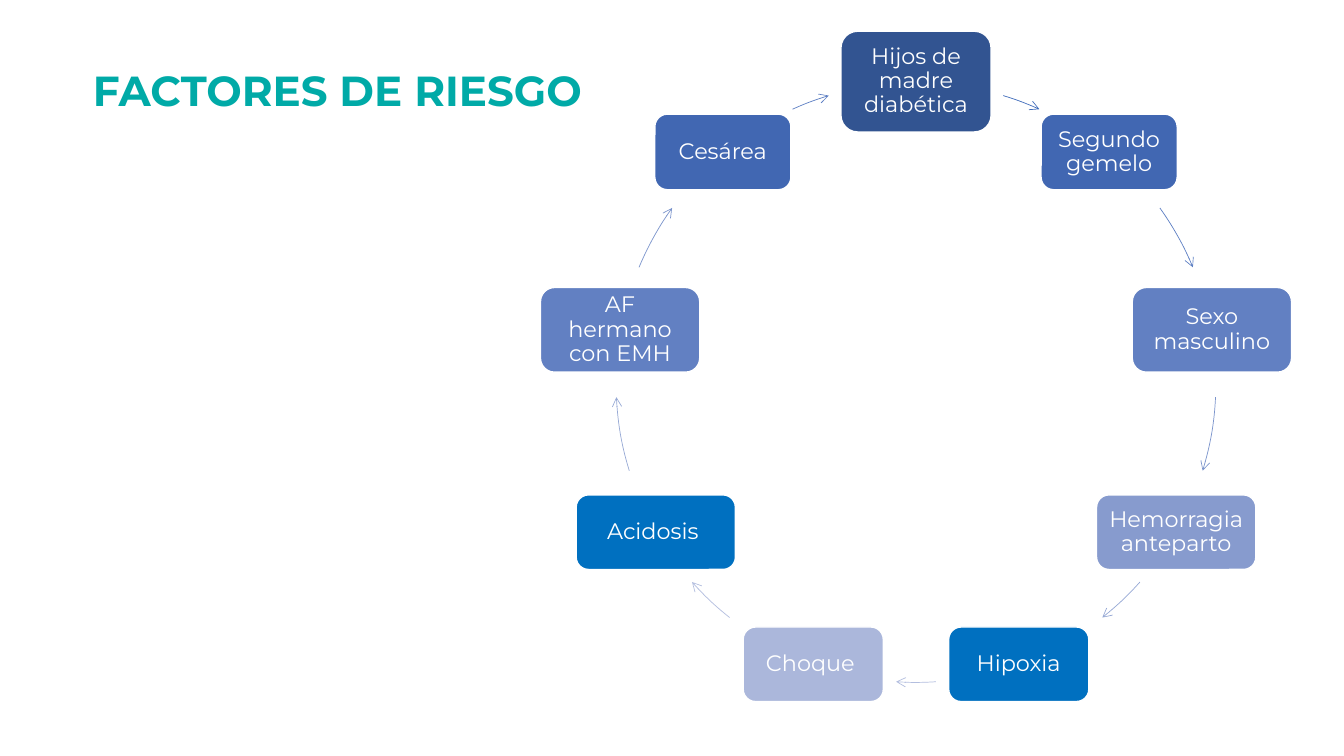
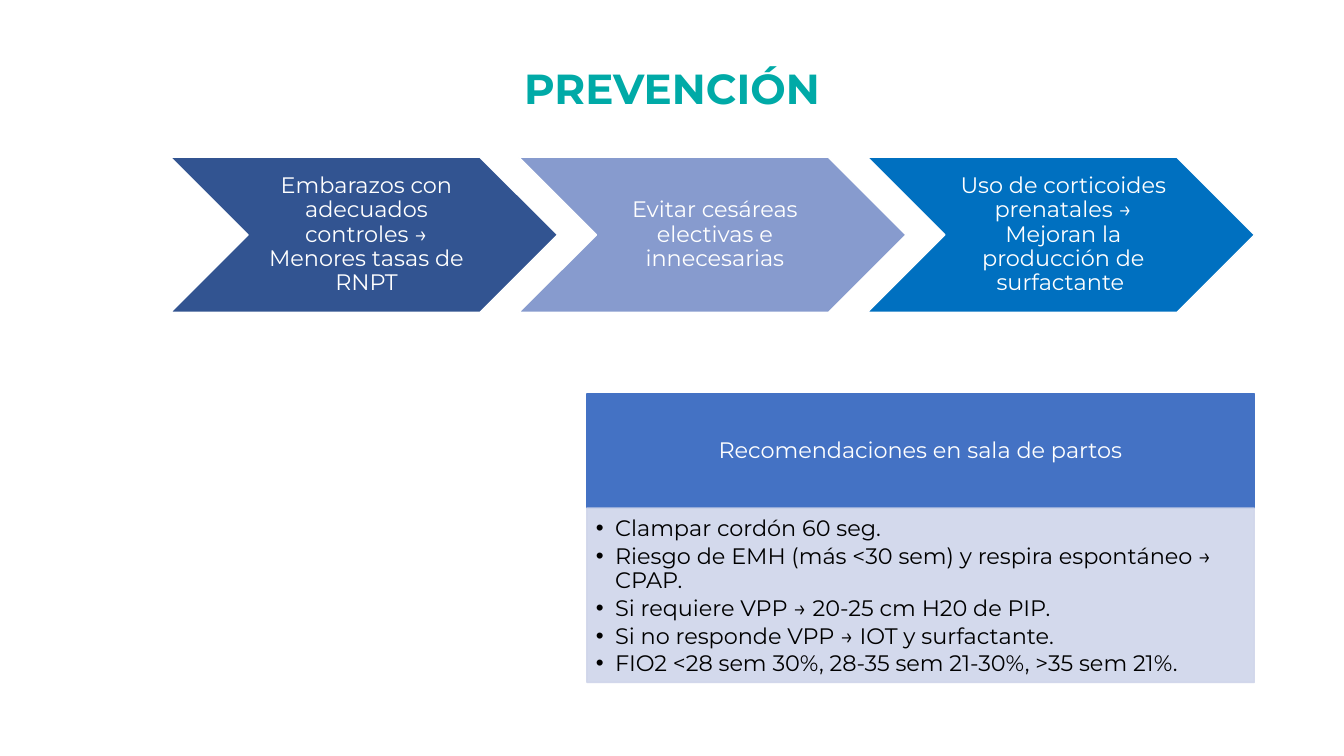
from dataclasses import dataclass
from math import cos, radians, sin

from lxml.etree import SubElement
from pptx import Presentation
from pptx.dml.color import RGBColor
from pptx.enum.shapes import MSO_SHAPE as Preset
from pptx.enum.text import MSO_ANCHOR as Anchor, PP_ALIGN as Align
from pptx.oxml.ns import qn
from pptx.util import Inches, Pt


@dataclass(frozen=True)
class Theme:
    font: str = "Montserrat"
    title_size: int = 30
    body_size: int = 16
    line_spacing: float = 0.9
    title: str = "00AAA7"
    white: str = "FFFFFF"
    black: str = "000000"
    navy: str = "325491"
    royal: str = "4167B2"
    medium: str = "6280C2"
    soft: str = "879BCE"
    pale: str = "ABB7DB"
    bright: str = "0070C0"
    header: str = "4472C4"
    panel: str = "CFD5EA"
    arrows: tuple = ("416DBB", "5E80C4", "7B94CC", "97A9D5", "B3BEDF")


THEME = Theme()

RING_LEFT, RING_TOP, RING_SIZE = 6.11, 0.82, 5.95
CYCLE_CENTER = (RING_LEFT + RING_SIZE / 2, 3.79)
NODE_RADIUS = 2.98
RISK_FACTORS = (
    ("Hijos de madre diabética", THEME.navy),
    ("Segundo gemelo", THEME.royal),
    ("Sexo masculino", THEME.medium),
    ("Hemorragia anteparto", THEME.soft),
    ("Hipoxia", THEME.bright),
    ("Choque ", THEME.pale),
    ("Acidosis ", THEME.bright),
    ("AF hermano con EMH", THEME.medium),
    ("Cesárea", THEME.royal),
)
# Right half of the cycle, from the top; the left half mirrors it.
NODE_SIZES = ((1.49, 1), (1.35, 0.75), (1.58, 0.84), (1.58, 0.74), (1.39, 0.74))
ARROW_ANGLES = ((16.9, 24.3), (54.4, 67.4), (92.8, 107.1), (131.7, 141.6), (176.2, 183.8))

MEASURES = (
    ("Embarazos con adecuados controles → Menores tasas de RNPT", THEME.navy),
    ("Evitar cesáreas electivas e innecesarias", THEME.soft),
    ("Uso de corticoides prenatales → Mejoran la producción de surfactante ", THEME.bright),
)
RECOMMENDATIONS = (
    "Clampar cordón 60 seg.",
    "Riesgo de EMH (más <30 sem) y respira espontáneo → CPAP.",
    "Si requiere VPP → 20-25 cm H20 de PIP.",
    "Si no responde VPP → IOT y surfactante.",
    "FIO2 <28 sem 30%, 28-35 sem 21-30%, >35 sem 21%.",
)


def add_bullet(paragraph, indent=0.19):
    properties = paragraph._p.get_or_add_pPr()
    properties.set("marL", str(Inches(indent)))
    properties.set("indent", str(-Inches(indent)))
    SubElement(properties, qn("a:buFont"), typeface="Arial")
    SubElement(properties, qn("a:buChar"), char="•")


def write_text(shape, *texts, size=THEME.body_size, color=THEME.white, bold=False,
               align=Align.CENTER, anchor=Anchor.MIDDLE, insets=(0.07,) * 4,
               spacing=THEME.line_spacing, after=0, bullets=False):
    """Write one paragraph per text; insets run left, top, right, bottom."""
    frame = shape.text_frame
    frame.word_wrap = True
    frame.vertical_anchor = anchor
    (frame.margin_left, frame.margin_top,
     frame.margin_right, frame.margin_bottom) = map(Inches, insets)
    for index, text in enumerate(texts):
        paragraph = frame.add_paragraph() if index else frame.paragraphs[0]
        if bullets:
            add_bullet(paragraph)
        paragraph.alignment = align
        paragraph.line_spacing = spacing
        paragraph.space_after = Pt(after)
        run = paragraph.add_run()
        run.text = text
        run.font.name = THEME.font
        run.font.size = Pt(size)
        run.font.bold = bold
        run.font.color.rgb = RGBColor.from_string(color)


def add_title(slide, text, left, top, width):
    box = slide.shapes.add_textbox(*map(Inches, (left, top, width, 0.61)))
    write_text(box, text, size=THEME.title_size, color=THEME.title, bold=True,
               anchor=Anchor.TOP, insets=(0.1, 0.05, 0.1, 0.05), spacing=1.0)


def add_block(slide, preset, bounds, fill, line=THEME.white):
    shape = slide.shapes.add_shape(preset, *map(Inches, bounds))
    shape.shadow.inherit = False
    shape.fill.solid()
    shape.fill.fore_color.rgb = RGBColor.from_string(fill)
    shape.line.color.rgb = RGBColor.from_string(line)
    shape.line.width = Pt(1)
    return shape


def set_opacity(shape, percent):
    """Apply one opacity to both the fill and the outline."""
    for color in shape._element.spPr.iter(qn("a:srgbClr")):
        SubElement(color, qn("a:alpha"), val=str(percent * 1000))


def cycle_point(angle, radius):
    """Point in inches at an angle clockwise from the top of the cycle."""
    x, y = CYCLE_CENTER
    return x + radius * sin(radians(angle)), y - radius * cos(radians(angle))


def add_arc_arrow(slide, start, end, color):
    """Draw part of the ring; angles run clockwise from the top."""
    bounds = (RING_LEFT, RING_TOP, RING_SIZE, RING_SIZE)
    arc = slide.shapes.add_shape(Preset.ARC, *map(Inches, bounds))
    for index, angle in enumerate((start, end)):
        # Arc angles start at the right, in units of 1/60000 degree.
        arc.adjustments[index] = (angle - 90) % 360 * 0.6
    arc.shadow.inherit = False
    arc.fill.background()
    arc.line.color.rgb = RGBColor.from_string(color)
    arc.line.width = Pt(0.5)
    SubElement(arc.line._get_or_add_ln(), qn("a:tailEnd"), type="arrow")


def add_risk_cycle(slide):
    count = len(RISK_FACTORS)
    for index, (text, fill) in enumerate(RISK_FACTORS):
        mirrored = min(index, count - index)
        width, height = NODE_SIZES[mirrored]
        x, y = cycle_point(index * 360 / count, NODE_RADIUS)
        bounds = (x - width / 2, y - height / 2, width, height)
        node = add_block(slide, Preset.ROUNDED_RECTANGLE, bounds, fill)
        write_text(node, text)

        if index < len(ARROW_ANGLES):
            start, end = ARROW_ANGLES[index]
        else:
            end, start = (360 - angle for angle in ARROW_ANGLES[count - 1 - index])
        add_arc_arrow(slide, start, end, THEME.arrows[mirrored])


def add_measures(slide, left=1.69, top=1.56, width=3.84, height=1.54):
    for index, (text, fill) in enumerate(MEASURES):
        bounds = (left + index * width * 0.9, top, width, height)
        chevron = add_block(slide, Preset.CHEVRON, bounds, fill)
        write_text(chevron, text, insets=(0.07, 0.02, 0.02, 0.02))


def add_recommendations(slide, left=5.82, top=3.91, width=6.62):
    header_height, panel_height = 1.13, 1.73
    header = add_block(slide, Preset.RECTANGLE, (left, top, width, header_height),
                       THEME.header, THEME.header)
    write_text(header, "Recomendaciones en sala de partos", insets=(0.12, 0.07, 0.12, 0.07))
    panel = add_block(slide, Preset.RECTANGLE,
                      (left, top + header_height, width, panel_height),
                      THEME.panel, THEME.panel)
    set_opacity(panel, 90)
    write_text(panel, *RECOMMENDATIONS, color=THEME.black, align=Align.LEFT,
               anchor=Anchor.TOP, insets=(0.09, 0.09, 0.12, 0.14), after=2.6, bullets=True)


def main():
    presentation = Presentation()
    presentation.slide_width = Inches(13.33)
    presentation.slide_height = Inches(7.5)
    blank = presentation.slide_layouts[6]

    risk_slide = presentation.slides.add_slide(blank)
    add_title(risk_slide, "FACTORES DE RIESGO ", 0.36, 0.59, 6.09)
    add_risk_cycle(risk_slide)

    prevention_slide = presentation.slides.add_slide(blank)
    add_title(prevention_slide, "PREVENCIÓN", 4.57, 0.57, 4.19)
    add_measures(prevention_slide)
    add_recommendations(prevention_slide)

    presentation.save("out.pptx")


if __name__ == "__main__":
    main()
